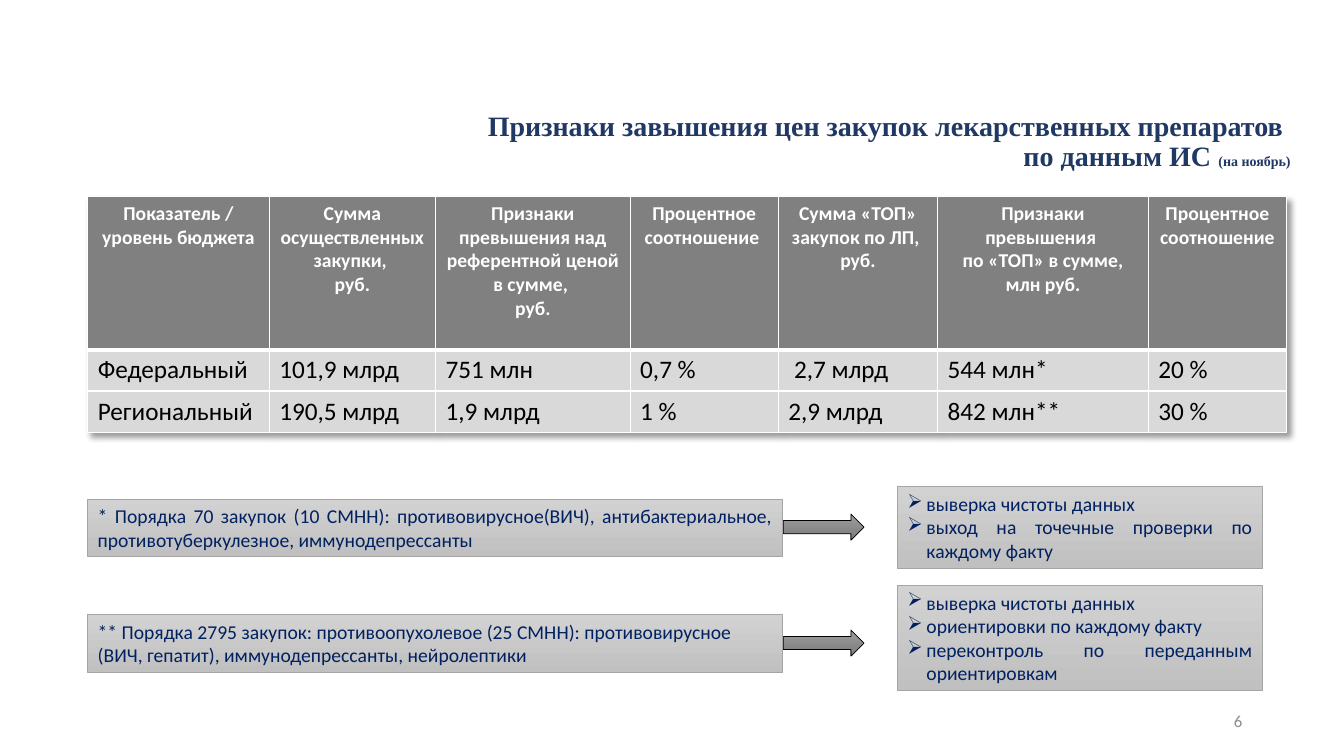
from lxml.etree import SubElement
from pptx import Presentation
from pptx.dml.color import RGBColor
from pptx.enum.shapes import MSO_SHAPE as Shape
from pptx.enum.text import MSO_ANCHOR as Anchor, MSO_AUTO_SIZE as AutoSize, PP_ALIGN as Align
from pptx.oxml import parse_xml
from pptx.oxml.ns import nsdecls, qn
from pptx.util import Inches, Pt

WHITE = RGBColor(0xFF, 0xFF, 0xFF)
BLACK = RGBColor(0x00, 0x00, 0x00)
TITLE_BLUE = RGBColor(0x20, 0x38, 0x64)
NOTE_BLUE = RGBColor(0x00, 0x20, 0x60)
HEADER_GRAY = RGBColor(0x80, 0x80, 0x80)
ROW_GRAY = RGBColor(0xD9, 0xD9, 0xD9)
BOX_LIGHT = RGBColor(0xD2, 0xD2, 0xD2)
BOX_DARK = RGBColor(0xC0, 0xC0, 0xC0)
BOX_LINE = RGBColor(0xA5, 0xA5, 0xA5)
ARROW_LIGHT = RGBColor(0x9D, 0x9D, 0x9D)
ARROW_DARK = RGBColor(0x7C, 0x7C, 0x7C)
NUMBER_GRAY = RGBColor(0x8C, 0x8C, 0x8C)


def write(frame, text, size=14, color=NOTE_BLUE, font="Calibri", bold=False,
          align=Align.LEFT, bullet=None):
    frame.word_wrap = True
    for index, line in enumerate(text.split("\n")):
        paragraph = frame.add_paragraph() if index else frame.paragraphs[0]
        paragraph.alignment = align
        if bullet:
            properties = paragraph._p.get_or_add_pPr()
            properties.set("marL", str(Inches(0.19)))
            properties.set("indent", str(-Inches(0.19)))
            SubElement(properties, qn("a:buChar")).set("char", bullet)
        run = paragraph.add_run()
        run.text = line
        run.font.name = font
        run.font.size = Pt(size)
        run.font.bold = bold
        run.font.color.rgb = color


def add_gradient_shape(kind, left, top, width, height, light, dark, line):
    shape = slide.shapes.add_shape(kind, Inches(left), Inches(top), Inches(width), Inches(height))
    shape.shadow.inherit = False
    shape.fill.gradient()
    shape.fill.gradient_angle = 270
    for stop, color in zip(shape.fill.gradient_stops, (light, dark)):
        stop.color.rgb = color
    shape.line.color.rgb = line
    shape.line.width = Pt(0.5)
    return shape


presentation = Presentation()
presentation.slide_width = Inches(13.33)
presentation.slide_height = Inches(7.5)
slide = presentation.slides.add_slide(presentation.slide_layouts[5])

title = slide.shapes.title
title.left, title.top = Inches(4.25), Inches(1.02)
title.width, title.height = Inches(8.65), Inches(0.79)
title_frame = title.text_frame
title_frame.auto_size = AutoSize.NONE
title_frame.vertical_anchor = Anchor.MIDDLE
title_format = {"color": TITLE_BLUE, "font": "Times New Roman", "bold": True, "align": Align.RIGHT}
title_paragraph = title_frame.paragraphs[0]
title_paragraph.line_spacing = 0.9
write(title_frame, "Признаки завышения цен закупок лекарственных препаратов ", size=20, **title_format)
title_paragraph.add_line_break()
write(title_frame, "по данным ИС ", size=20, **title_format)
write(title_frame, "(на ноябрь)", size=10, **title_format)

rows = [
    ["Показатель /\nуровень бюджета", "Сумма осуществленных закупки, \nруб.",
     "Признаки превышения над референтной ценой в сумме, \nруб.", "Процентное соотношение ",
     "Сумма «ТОП» закупок по ЛП, \nруб.",
     "Признаки превышения \nпо «ТОП» в сумме,\nмлн руб.", "Процентное соотношение "],
    ["Федеральный", "101,9 млрд", "751 млн", "0,7 %", " 2,7 млрд", "544 млн*", "20 %"],
    ["Региональный", "190,5 млрд", "1,9 млрд", "1 %", "2,9 млрд", "842 млн**", "30 %"],
]
column_widths = [1.8, 1.65, 1.93, 1.47, 1.58, 2.09, 1.37]
row_heights = [1.52, 0.41, 0.41]
table = slide.shapes.add_table(len(rows), len(column_widths), Inches(0.87), Inches(1.95),
                               Inches(sum(column_widths)), Inches(sum(row_heights))).table
table._tbl.tblPr.insert(0, parse_xml(
    f'<a:effectLst {nsdecls("a")}><a:outerShdw blurRad="50800" dist="38100" dir="2700000" algn="tl">'
    '<a:srgbClr val="000000"><a:alpha val="40000"/></a:srgbClr></a:outerShdw></a:effectLst>'))
for column, width in zip(table.columns, column_widths):
    column.width = Inches(width)
for row_index, (texts, height) in enumerate(zip(rows, row_heights)):
    table.rows[row_index].height = Inches(height)
    header = row_index == 0
    for column_index, text in enumerate(texts):
        cell = table.cell(row_index, column_index)
        for side in ("L", "R", "T", "B"):
            thick = (side == "B" and header) or (side == "T" and row_index == 1)
            cell._tc.get_or_add_tcPr().append(parse_xml(
                f'<a:ln{side} {nsdecls("a")} w="{Pt(3 if thick else 1)}"><a:solidFill>'
                f'<a:srgbClr val="{WHITE}"/></a:solidFill></a:ln{side}>'))
        cell.fill.solid()
        cell.fill.fore_color.rgb = HEADER_GRAY if header else ROW_GRAY
        write(cell.text_frame, text, size=14 if header else 18, color=WHITE if header else BLACK,
              bold=header, align=Align.CENTER if header else Align.LEFT)

boxes = [
    (0.87, 4.95, 6.89, 0.57, None,
     "* Порядка 70 закупок (10 СМНН): противовирусное(ВИЧ), антибактериальное, "
     "противотуберкулезное, иммунодепрессанты"),
    (0.87, 6.1, 6.89, 0.57, None,
     "** Порядка 2795 закупок: противоопухолевое (25 СМНН): противовирусное \n"
     "(ВИЧ, гепатит), иммунодепрессанты, нейролептики"),
    (8.9, 4.83, 3.62, 0.81, "➢",
     "выверка чистоты данных\nвыход на точечные проверки по каждому факту"),
    (8.9, 5.81, 3.62, 1.04, "➢",
     "выверка чистоты данных \nориентировки по каждому факту\n"
     "переконтроль по переданным ориентировкам"),
]
for left, top, width, height, bullet, text in boxes:
    box = add_gradient_shape(Shape.RECTANGLE, left, top, width, height, BOX_LIGHT, BOX_DARK, BOX_LINE)
    box.text_frame.vertical_anchor = Anchor.TOP
    write(box.text_frame, text, align=Align.JUSTIFY, bullet=bullet)

for top in (5.1, 6.25):
    add_gradient_shape(Shape.RIGHT_ARROW, 7.77, top, 0.8, 0.26, ARROW_LIGHT, ARROW_DARK, BLACK)

number_box = slide.shapes.add_textbox(Inches(9.42), Inches(6.95), Inches(3), Inches(0.4))
number_box.text_frame.vertical_anchor = Anchor.MIDDLE
write(number_box.text_frame, "6", size=12, color=NUMBER_GRAY, align=Align.RIGHT)

presentation.save("out.pptx")
